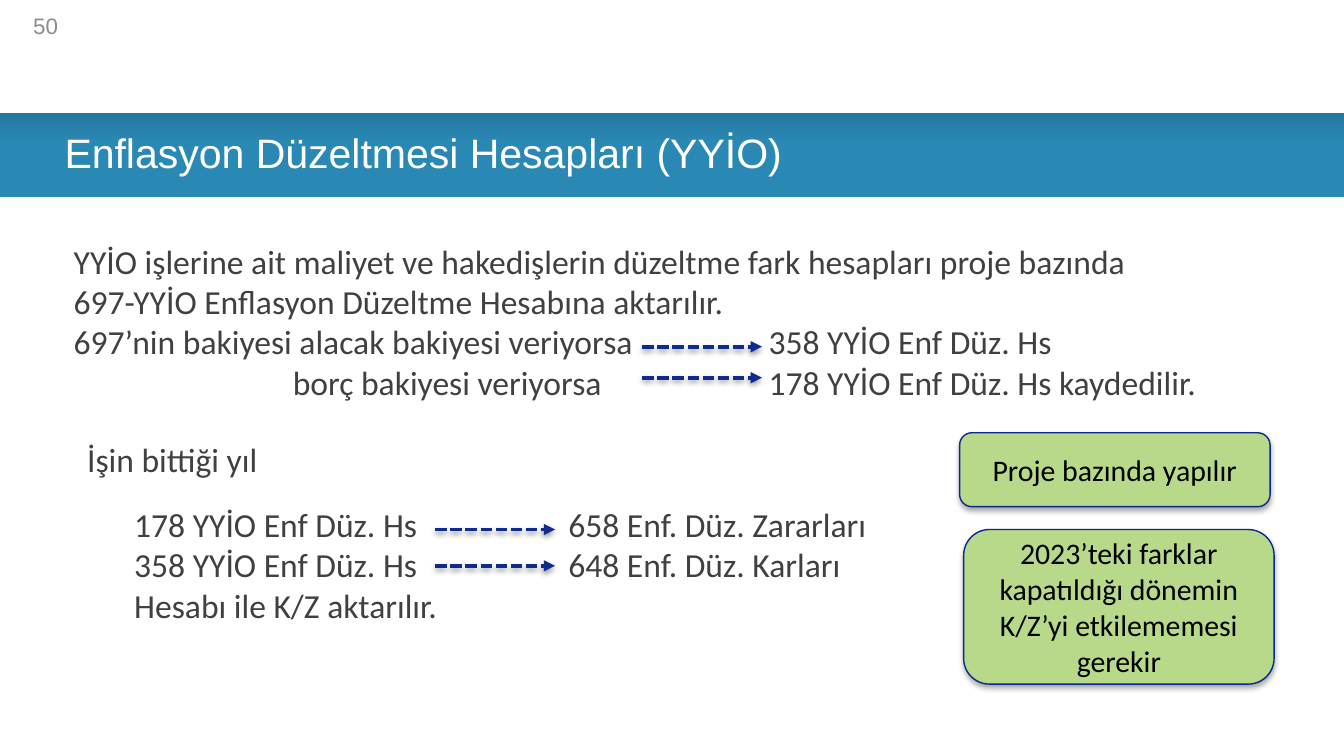
from lxml import etree
from pptx import Presentation
from pptx.dml.color import RGBColor
from pptx.enum.dml import MSO_LINE
from pptx.enum.shapes import MSO_CONNECTOR, MSO_SHAPE
from pptx.enum.text import MSO_ANCHOR, PP_ALIGN
from pptx.oxml.ns import qn
from pptx.util import Inches, Pt

LEFT, MID, RIGHT = PP_ALIGN.LEFT, PP_ALIGN.CENTER, PP_ALIGN.RIGHT
TOP, CENTER = MSO_ANCHOR.TOP, MSO_ANCHOR.MIDDLE
RECT, ROUND = MSO_SHAPE.RECTANGLE, MSO_SHAPE.ROUNDED_RECTANGLE
LINE, DASH = MSO_CONNECTOR.STRAIGHT, MSO_LINE.SQUARE_DOT

WIDTH = 10
HEIGHT = WIDTH * 9 / 16

COLORS = {
    "deep": "24779F", "blue": "2A88B4", "white": "FFFFFF", "text": "404040",
    "arrow": "0E2B8D", "edge": "0B288D", "green": "B7D989",
    "black": "000000", "gray": "8C8C8C",
}


def color(name):
    return RGBColor.from_string(COLORS[name])


def place(*sizes):
    return [Inches(size) for size in sizes]


def write(shape, text, size=18, font="Calibri", ink="text", align=LEFT,
          anchor=TOP, tabs=()):
    frame = shape.text_frame
    frame.word_wrap = True
    frame.vertical_anchor = anchor
    frame.text = text
    for para in frame.paragraphs:
        para.alignment = align
        if tabs:
            stops = etree.SubElement(para._p.get_or_add_pPr(), qn("a:tabLst"))
            for stop in tabs:
                etree.SubElement(stops, qn("a:tab"), pos=str(Inches(stop)), algn="l")
        para.font.size = Pt(size)
        para.font.name = font
        para.font.color.rgb = color(ink)


def shade(props, alpha, drop):
    effects = props.find(qn("a:effectLst"))
    if effects is None:
        effects = etree.SubElement(props, qn("a:effectLst"))
    shadow = etree.SubElement(
        effects, qn("a:outerShdw"), blurRad=str(Pt(3.1)), dist=str(Pt(drop)),
        dir="5400000", rotWithShape="0")
    ink = etree.SubElement(shadow, qn("a:srgbClr"), val=COLORS["black"])
    etree.SubElement(ink, qn("a:alpha"), val=str(alpha * 1000))


def add_band(slide):
    band = slide.shapes.add_shape(RECT, *place(0, 0.84, WIDTH, 0.63))
    band.shadow.inherit = False
    band.line.fill.background()
    band.fill.gradient()
    band.fill.gradient_angle = 270
    for stop, name, spot in zip(band.fill.gradient_stops, ("deep", "blue"), (0, 0.34)):
        stop.color.rgb = color(name)
        stop.position = spot
    slide.shapes._spTree.insert(2, band._element)


def add_title(slide, text):
    title = slide.shapes.title
    title.left, title.top, title.width, title.height = place(0.38, 0.87, 9, 0.53)
    write(title, text, size=22, font="Arial", ink="white", anchor=CENTER)


def add_text(slide, box, text, **style):
    write(slide.shapes.add_textbox(*place(*box)), text, **style)


def add_arrow(slide, left, top):
    start, end, level = place(left, left + 0.89, top)
    arrow = slide.shapes.add_connector(LINE, start, level, end, level)
    arrow.line.color.rgb = color("arrow")
    arrow.line.width = Pt(2)
    arrow.line.dash_style = DASH
    etree.SubElement(arrow.line._get_or_add_ln(), qn("a:tailEnd"), type="triangle")
    shade(arrow._element.spPr, 38, 1.6)


def add_note(slide, box, text):
    note = slide.shapes.add_shape(ROUND, *place(*box))
    note.fill.solid()
    note.fill.fore_color.rgb = color("green")
    note.line.color.rgb = color("edge")
    note.line.width = Pt(0.75)
    note.shadow.inherit = False
    shade(note._element.spPr, 35, 1.8)
    write(note, text, size=16, ink="black", align=MID, anchor=CENTER)


def main():
    deck = Presentation()
    deck.slide_width, deck.slide_height = place(WIDTH, HEIGHT)
    slide = deck.slides.add_slide(deck.slide_layouts[5])

    add_band(slide)
    add_title(slide, "Enflasyon Düzeltmesi Hesapları (YYİO)")

    add_text(slide, (0.45, 1.74, 8.62, 1.31), "\n".join((
        "YYİO işlerine ait maliyet ve hakedişlerin düzeltme fark hesapları proje bazında",
        "697-YYİO Enflasyon Düzeltme Hesabına aktarılır.",
        "697’nin bakiyesi alacak bakiyesi veriyorsa\t358 YYİO Enf Düz. Hs",
        "\tborç bakiyesi veriyorsa\t178 YYİO Enf Düz. Hs kaydedilir.",
    )), tabs=(1.63, 5.17))
    add_text(slide, (0.9, 3.7, 5.78, 1.31), "\n".join((
        "178 YYİO Enf Düz. Hs\t658 Enf. Düz. Zararları",
        "358 YYİO Enf Düz. Hs\t648 Enf. Düz. Karları",
        "Hesabı ile K/Z aktarılır.",
    )), tabs=(3.23,))
    add_text(slide, (0.55, 3.22, 7.11, 0.4), "İşin bittiği yıl")

    for left, tops in ((4.78, (2.58, 2.81)), (3.24, (3.94, 4.21))):
        for top in tops:
            add_arrow(slide, left, top)

    add_note(slide, (7.14, 3.22, 2.31, 0.55), "Proje bazında yapılır")
    add_note(slide, (7.17, 3.94, 2.31, 1.15),
             "2023’teki farklar kapatıldığı dönemin K/Z’yi etkilememesi gerekir")
    add_text(slide, (0.04, 0.04, 0.49, 0.3), "50", size=12, font="Arial",
             ink="gray", align=RIGHT, anchor=CENTER)

    deck.save("out.pptx")


if __name__ == "__main__":
    main()
